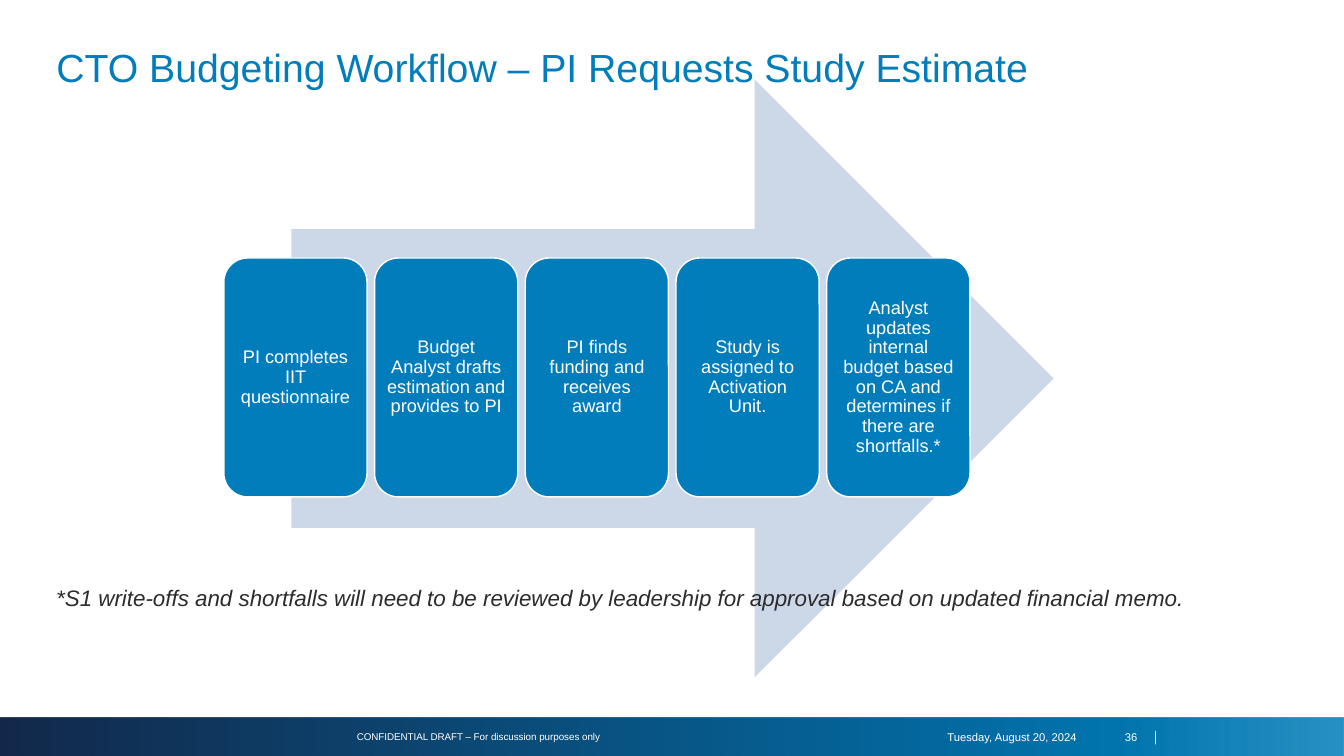
"""Build the study estimate workflow slide."""
from lxml import etree
from pptx import Presentation
from pptx.dml.color import RGBColor
from pptx.enum.shapes import MSO_SHAPE
from pptx.enum.text import MSO_ANCHOR, MSO_AUTO_SIZE, PP_ALIGN
from pptx.oxml import parse_xml
from pptx.oxml.ns import nsdecls
from pptx.util import Inches, Pt

BLUE = RGBColor(0x00, 0x7D, 0xBA)
MID_BLUE = RGBColor(0x02, 0x75, 0xAF)
NAVY = RGBColor(0x13, 0x29, 0x4B)
PALE = RGBColor(0xCC, 0xD7, 0xE7)
INK = RGBColor(0x2C, 0x2C, 0x2D)
WHITE = RGBColor(0xFF, 0xFF, 0xFF)

STEPS = [
    "PI completes IIT questionnaire",
    "Budget Analyst drafts estimation and provides to PI",
    "PI finds funding and receives award",
    "Study is assigned to Activation Unit.",
    "Analyst updates internal budget based on CA and determines if there are shortfalls.*",
]
FOOTER = [
    ("Tuesday, August 20, 2024", 9.18, 1.6, 8, PP_ALIGN.RIGHT, MSO_ANCHOR.MIDDLE),
    ("36", 10.78, 0.6, 8, PP_ALIGN.RIGHT, MSO_ANCHOR.MIDDLE),
    ("│", 11.2, 0.4, 8, PP_ALIGN.RIGHT, MSO_ANCHOR.MIDDLE),
    ("CONFIDENTIAL DRAFT – For discussion purposes only", 0.46, 8.57, 7,
     PP_ALIGN.CENTER, MSO_ANCHOR.TOP),
]


def place(sp, left, top, width, height):
    sp.left, sp.top = Inches(left), Inches(top)
    sp.width, sp.height = Inches(width), Inches(height)


def write(sp, text, size=13, color=WHITE, italic=False, align=PP_ALIGN.LEFT,
          anchor=MSO_ANCHOR.MIDDLE, spacing=1.0, inset=None):
    tf = sp.text_frame
    tf.word_wrap = True
    tf.auto_size = MSO_AUTO_SIZE.NONE
    tf.vertical_anchor = anchor
    if inset is not None:
        tf.margin_left = tf.margin_right = Inches(inset)
        tf.margin_top = tf.margin_bottom = Inches(inset)
    p = tf.paragraphs[0]
    p.alignment = align
    p.line_spacing = spacing
    r = p.add_run()
    r.text = text
    r.font.name = "Arial"
    r.font.size = Pt(size)
    r.font.italic = italic
    r.font.color.rgb = color


def add_text(s, text, left, top, width, height, **fmt):
    sp = s.shapes.add_textbox(0, 0, 0, 0)
    place(sp, left, top, width, height)
    write(sp, text, **fmt)


def add_block(s, kind, left, top, width, height, fill, line=None):
    sp = s.shapes.add_shape(kind, 0, 0, 0, 0)
    place(sp, left, top, width, height)
    sp.shadow.inherit = False
    sp.fill.solid()
    sp.fill.fore_color.rgb = fill
    if line is None:
        sp.line.fill.background()
    else:
        sp.line.color.rgb = line
        sp.line.width = Pt(1)
    return sp


def add_footer_bar(s):
    sp = add_block(s, MSO_SHAPE.RECTANGLE, 0, 7.12, 13.33, 0.38, NAVY)
    sp.fill.gradient()
    sp.fill.gradient_angle = 0
    stops = sp.fill.gradient_stops
    stops[0].color.rgb, stops[0].position = NAVY, 0
    stops[1].color.rgb, stops[1].position = BLUE, 1
    first, last = sp._element.spPr.findall(".//{*}gs")
    etree.SubElement(last[0], last.tag[:-2] + "alpha", val="84000")
    first.addnext(parse_xml(
        f'<a:gs {nsdecls("a")} pos="83000"><a:srgbClr val="{MID_BLUE}"/></a:gs>'))


def main():
    prs = Presentation()
    prs.slide_width, prs.slide_height = Inches(13.33), Inches(7.5)
    s = prs.slides.add_slide(prs.slide_layouts[5])

    title = s.shapes.title
    place(title, 0.46, 0.42, 12.42, 0.54)
    write(title, "CTO Budgeting Workflow – PI Requests Study Estimate",
          size=28, color=BLUE, spacing=0.9)

    add_footer_bar(s)
    for text, left, width, size, align, anchor in FOOTER:
        add_text(s, text, left, 7.2, width, 0.23, size=size, align=align, anchor=anchor)

    add_block(s, MSO_SHAPE.RIGHT_ARROW, 2.89, 0.79, 7.56, 5.93, PALE)
    for i, step in enumerate(STEPS):
        card = add_block(s, MSO_SHAPE.ROUNDED_RECTANGLE, 2.22 + i * 1.495, 2.56,
                         1.42, 2.37, BLUE, line=WHITE)
        write(card, step, align=PP_ALIGN.CENTER, spacing=0.9, inset=0.05)

    add_text(s, "*S1 write-offs and shortfalls will need to be reviewed by leadership "
             "for approval based on updated financial memo.",
             0.46, 5.75, 11.54, 0.37, size=16, color=INK, italic=True,
             anchor=MSO_ANCHOR.TOP)
    prs.save("out.pptx")


if __name__ == "__main__":
    main()
